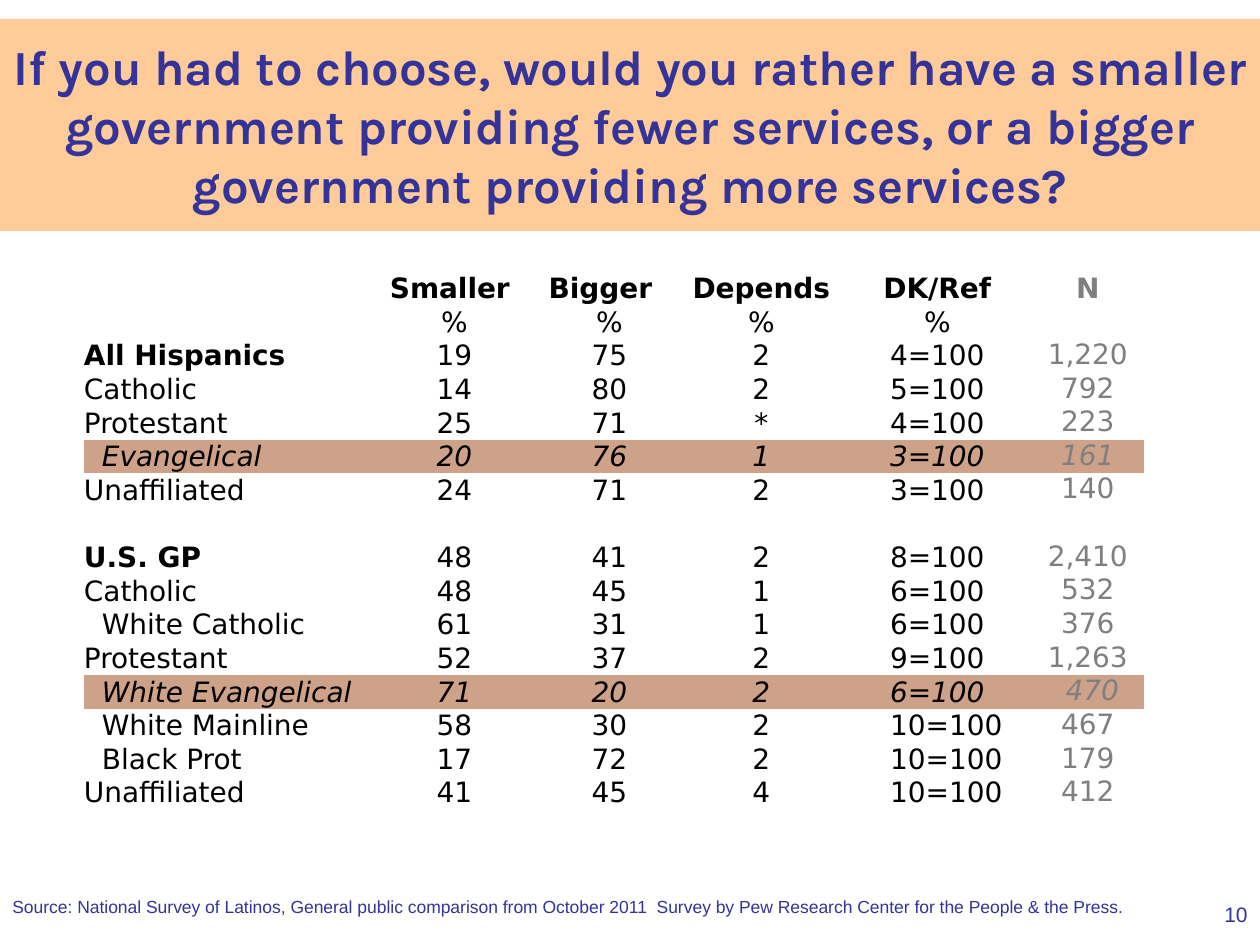
from lxml.etree import SubElement
from pptx import Presentation
from pptx.dml.color import RGBColor
from pptx.enum.shapes import MSO_SHAPE
from pptx.enum.text import MSO_ANCHOR, PP_ALIGN
from pptx.oxml.ns import qn
from pptx.util import Pt

NAVY = RGBColor(0x33, 0x33, 0x99)
PEACH = RGBColor(0xFF, 0xCC, 0x99)
TAN = RGBColor(0xCE, 0xA2, 0x89)
GRAY = RGBColor(0x7F, 0x7F, 0x7F)
BLACK = RGBColor(0, 0, 0)

NO_GRID_STYLE = "{2D5ABB26-0587-4C30-8999-92F81FD0307C}"
SPACE = 9
HEADER_HEIGHT, BODY_HEIGHT = 43, 504
COLUMN_WIDTHS = [295, 151, 150, 163, 189, 112]
BIGGER, DK_REF, N = 2, 4, 5
GROUPS = {"All Hispanics", "U.S. GP"}
HIGHLIGHTED = {"Evangelical", "White Evangelical"}
INDENTED = HIGHLIGHTED | {"White Catholic", "White Mainline", "Black Prot"}
ROWS = [
    ["", "Smaller", "Bigger", "Depends", "DK/Ref", "N"],
    ["", "%", "%", "%", "%", ""],
    ["All Hispanics", "19", "75", "2", "4=100", "1,220"],
    ["Catholic", "14", "80", "2", "5=100", "792"],
    ["Protestant", "25", "71", "*", "4=100", "223"],
    ["Evangelical", "20", "76", "1", "3=100", "161"],
    ["Unaffiliated", "24", "71", "2", "3=100", "140"],
    ["", "", "", "", "", ""],
    ["U.S. GP", "48", "41", "2", "8=100", "2,410"],
    ["Catholic", "48", "45", "1", "6=100", "532"],
    ["White Catholic", "61", "31", "1", "6=100", "376"],
    ["Protestant", "52", "37", "2", "9=100", "1,263"],
    ["White Evangelical", "71", "20", "2", "6=100", "470"],
    ["White Mainline", "58", "30", "2", "10=100", "467"],
    ["Black Prot", "17", "72", "2", "10=100", "179"],
    ["Unaffiliated", "41", "45", "4", "10=100", "412"],
]


def emu(px):
    """Turn px into EMU at 126 px to the inch."""
    return round(px * 914400 / 126)


class SurveySlide:
    """Draws the elements of a survey slide in one style."""

    def __init__(self, page):
        self.page = page

    def set_text(self, frame, text, font, size, color, align=PP_ALIGN.LEFT, bold=False, italic=False):
        frame.text = text
        paragraph = frame.paragraphs[0]
        paragraph.alignment = align
        for span in paragraph.runs:
            span.font.name = font
            span.font.size = Pt(size)
            span.font.color.rgb = color
            span.font.bold = bold
            span.font.italic = italic

    def banner(self, left, top, width, height, text):
        box = self.page.shapes.add_shape(MSO_SHAPE.RECTANGLE, *map(emu, (left, top, width, height)))
        box.shadow.inherit = False
        box.fill.solid()
        box.fill.fore_color.rgb = PEACH
        box.line.fill.background()
        box.text_frame.word_wrap = True
        box.text_frame.vertical_anchor = MSO_ANCHOR.MIDDLE
        self.set_text(box.text_frame, text, "Karla", 28, NAVY, PP_ALIGN.CENTER, bold=True)

    def note(self, left, top, width, height, text, size, align=PP_ALIGN.LEFT, wrap=True):
        box = self.page.shapes.add_textbox(*map(emu, (left, top, width, height)))
        box.text_frame.word_wrap = wrap
        self.set_text(box.text_frame, text, "Arial", size, NAVY, align)

    def table(self, left, top, rows):
        frame = self.page.shapes.add_table(
            len(rows), len(COLUMN_WIDTHS), emu(left), emu(top),
            emu(sum(COLUMN_WIDTHS)), emu(HEADER_HEIGHT + BODY_HEIGHT))
        table = frame.table
        table.first_row = table.horz_banding = False
        for style in frame._element.iter(qn("a:tableStyleId")):
            style.text = NO_GRID_STYLE
        for column, width in zip(table.columns, COLUMN_WIDTHS):
            column.width = emu(width)
        for index, values in enumerate(rows):
            table.rows[index].height = emu(BODY_HEIGHT) // (len(rows) - 1) if index else emu(HEADER_HEIGHT)
            for column, text in enumerate(values):
                self.cell(table.cell(index, column), text, index == 0, column, values[0])

    def cell(self, cell, text, header, column, label):
        cell.margin_left = cell.margin_right = cell.margin_top = cell.margin_bottom = 0
        if text in INDENTED or (column == DK_REF and text.startswith("10")):
            cell.margin_left = emu(2 * SPACE)
        elif header and text in ("Smaller", "Bigger"):
            cell.margin_right = emu(SPACE)
        elif column == BIGGER or (column == N and label == "White Evangelical"):
            cell.margin_left = emu(SPACE)
        cell.vertical_anchor = MSO_ANCHOR.TOP if column == N and not header else MSO_ANCHOR.BOTTOM
        if label in HIGHLIGHTED:
            cell.fill.solid()
            cell.fill.fore_color.rgb = TAN
        else:
            cell.fill.background()
        self.set_text(cell.text_frame, text, "DejaVu Sans", 16, GRAY if column == N else BLACK,
                      PP_ALIGN.CENTER if column else PP_ALIGN.LEFT,
                      bold=header or text in GROUPS, italic=label in HIGHLIGHTED)
        if not text:
            SubElement(cell.text_frame.paragraphs[0]._p, qn("a:endParaRPr"), sz="1200")


def main():
    deck = Presentation()
    deck.slide_width, deck.slide_height = emu(1260), emu(945)
    slide = SurveySlide(deck.slides.add_slide(deck.slide_layouts[6]))
    slide.note(0, 890, 1145, 34,
               "Source: National Survey of Latinos, General public comparison from October 2011  "
               "Survey by Pew Research Center for the People & the Press.", 10, wrap=False)
    slide.note(966, 895, 294, 50, "10", 12, PP_ALIGN.RIGHT)
    slide.table(84, 262, ROWS)
    slide.banner(0, 19, 1260, 212,
                 "If you had to choose, would you rather have a smaller government providing "
                 "fewer services, or a bigger government providing more services?")
    deck.save("out.pptx")


if __name__ == "__main__":
    main()
